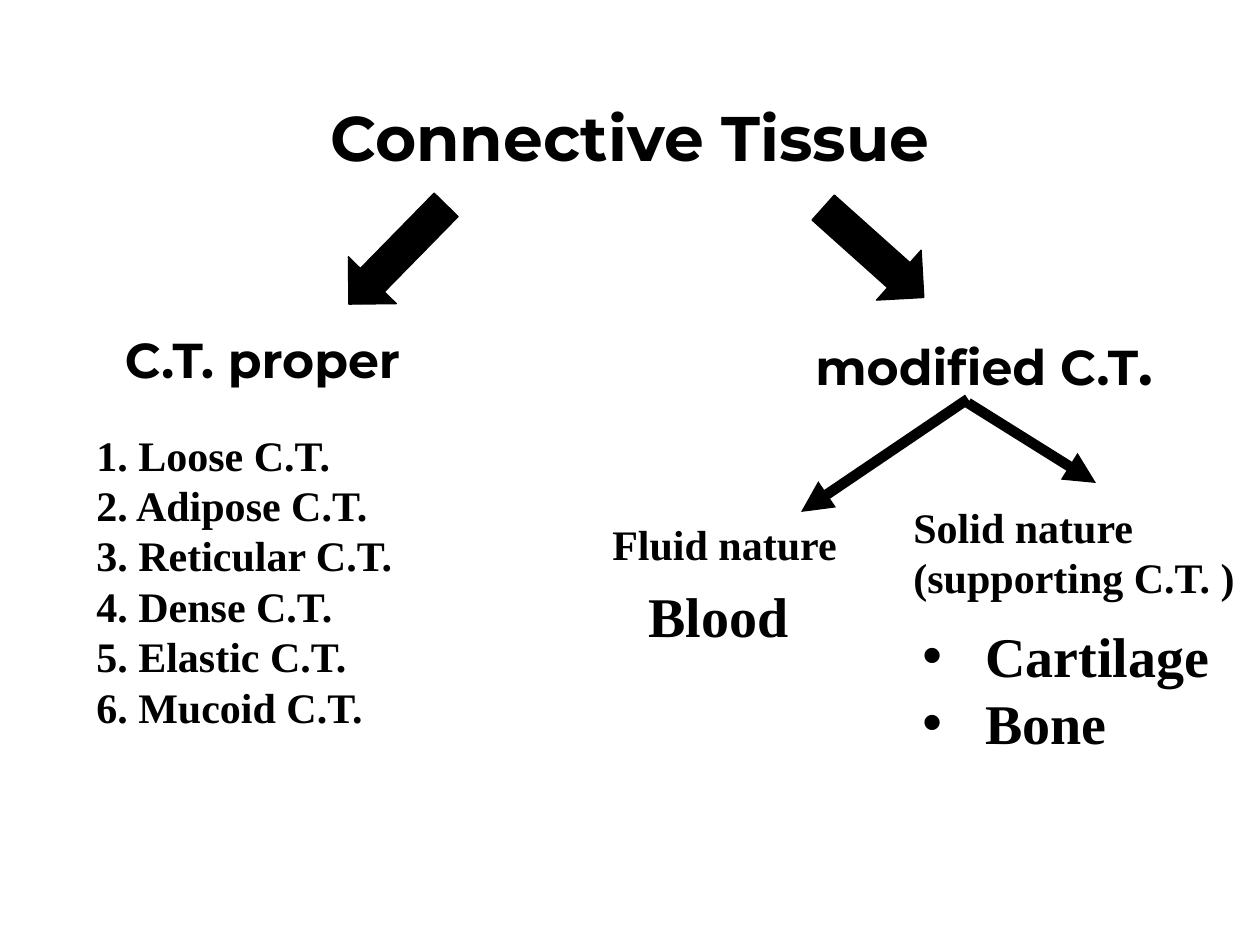
from lxml.etree import SubElement
from pptx import Presentation
from pptx.dml.color import RGBColor
from pptx.enum.shapes import MSO_CONNECTOR, MSO_SHAPE
from pptx.enum.text import MSO_ANCHOR, MSO_AUTO_SIZE, PP_ALIGN
from pptx.oxml.ns import qn
from pptx.util import Emu, Inches, Pt

BLACK = RGBColor(0x00, 0x00, 0x00)
WHITE = RGBColor(0xFF, 0xFF, 0xFF)
BLUE = RGBColor(0x05, 0x63, 0xC1)
SANS = "Montserrat"
SERIF = "Times New Roman"
PX_PER_INCH = 126


def px(length):
    return Emu(round(length * 914400 / PX_PER_INCH))


def place(box, left, top, width, height):
    return [px(v) for v in (box[0] + left, box[1] + top, width, height)]


def add_text(slide, bounds, paragraphs, font, align, filled=False, wrap=True,
             anchor=MSO_ANCHOR.TOP, grow=True):
    if filled:
        label = slide.shapes.add_shape(MSO_SHAPE.RECTANGLE, *bounds)
        label.shadow.inherit = False
        label.fill.solid()
        label.fill.fore_color.rgb = WHITE
        label.line.fill.background()
    else:
        label = slide.shapes.add_textbox(*bounds)
    frame = label.text_frame
    frame.word_wrap = wrap
    frame.auto_size = MSO_AUTO_SIZE.SHAPE_TO_FIT_TEXT if grow else MSO_AUTO_SIZE.NONE
    frame.vertical_anchor = anchor
    for index, runs in enumerate(paragraphs):
        paragraph = frame.add_paragraph() if index else frame.paragraphs[0]
        paragraph.alignment = align
        for words, size, color in runs:
            run = paragraph.add_run()
            run.text = words
            run.font.name = font
            run.font.size = Pt(size)
            run.font.bold = True
            run.font.color.rgb = color
    return frame


def one_run_each(lines, size):
    return [[(line, size, BLACK)] for line in lines]


def add_bullets(frame):
    for paragraph in frame.paragraphs:
        properties = paragraph._p.get_or_add_pPr()
        properties.set("marL", str(Inches(0.5)))
        properties.set("indent", str(-Inches(0.5)))
        SubElement(properties, qn("a:buFont")).set("typeface", "Arial")
        SubElement(properties, qn("a:buChar")).set("char", "•")


def add_block_arrow(slide, bounds, rotation):
    arrow = slide.shapes.add_shape(MSO_SHAPE.DOWN_ARROW, *bounds)
    arrow.shadow.inherit = False
    arrow.rotation = rotation
    arrow.adjustments[0] = 0.5
    arrow.adjustments[1] = 0.5
    arrow.fill.solid()
    arrow.fill.fore_color.rgb = BLACK
    arrow.line.color.rgb = BLACK
    arrow.line.width = Pt(0.75)


def add_branch_line(slide, ends):
    branch = slide.shapes.add_connector(MSO_CONNECTOR.STRAIGHT, *ends)
    branch.line.color.rgb = BLACK
    branch.line.width = Pt(6)
    SubElement(branch.line._get_or_add_ln(), qn("a:tailEnd")).set("type", "triangle")
    SubElement(branch._element.spPr, qn("a:effectLst"))


def build_title(slide, box):
    frame = add_text(slide, place(box, 0, 0, box[2], box[3]),
                     one_run_each(["Connective Tissue"], 36), SANS, PP_ALIGN.CENTER,
                     anchor=MSO_ANCHOR.MIDDLE, grow=False)
    frame.paragraphs[0].line_spacing = 0.9


def build_proper(slide, box):
    add_block_arrow(slide, place(box, 280, 0, 67, 139), 44.4)
    add_text(slide, place(box, 19, 138, 319, 72), one_run_each(["C.T. proper"], 28),
             SANS, PP_ALIGN.CENTER, filled=True, wrap=False)
    kinds = ["Loose", "Adipose", "Reticular", "Dense", "Elastic", "Mucoid"]
    numbered = [f"{number}. {kind} C.T." for number, kind in enumerate(kinds, 1)]
    add_text(slide, place(box, 0, 238, box[2], 318), one_run_each(numbered, 24),
             SERIF, PP_ALIGN.JUSTIFY)


def build_modified(slide, box):
    add_block_arrow(slide, place(box, 240, 0, 67, 135), 311.8)
    add_text(slide, place(box, 191, 138, 386, 81),
             [[("modified C.T", 28, BLACK), (".", 32, BLACK)]],
             SANS, PP_ALIGN.CENTER, filled=True, wrap=False)
    for start_x, start_y, end_x, end_y in ((368, 214, 201, 327), (368, 218, 496, 298)):
        add_branch_line(slide, [px(v) for v in (box[0] + start_x, box[1] + start_y,
                                                box[0] + end_x, box[1] + end_y)])
    add_text(slide, place(box, 0, 327, 252, 64), one_run_each(["Fluid nature"], 24),
             SERIF, PP_ALIGN.JUSTIFY, filled=True, wrap=False)
    add_text(slide, place(box, 301, 310, 362, 115),
             one_run_each(["Solid nature", "(supporting C.T. )"], 24),
             SERIF, PP_ALIGN.JUSTIFY, filled=True)
    add_text(slide, place(box, 21, 390, 195, 81),
             [[(" ", 32, BLUE), ("Blood ", 32, BLACK)]],
             SERIF, PP_ALIGN.CENTER, wrap=False)
    solids = add_text(slide, place(box, 310, 430, 319, 149),
                      one_run_each(["Cartilage", "Bone"], 32), SERIF, PP_ALIGN.LEFT)
    add_bullets(solids)


def main():
    deck = Presentation()
    deck.slide_width = px(1260)
    deck.slide_height = px(945)
    slide = deck.slides.add_slide(deck.slide_layouts[6])
    build_title(slide, (87, 50, 1086, 183))
    build_proper(slide, (84, 185, 386, 556))
    build_modified(slide, (600, 185, 663, 579))
    deck.save("out.pptx")


if __name__ == "__main__":
    main()
